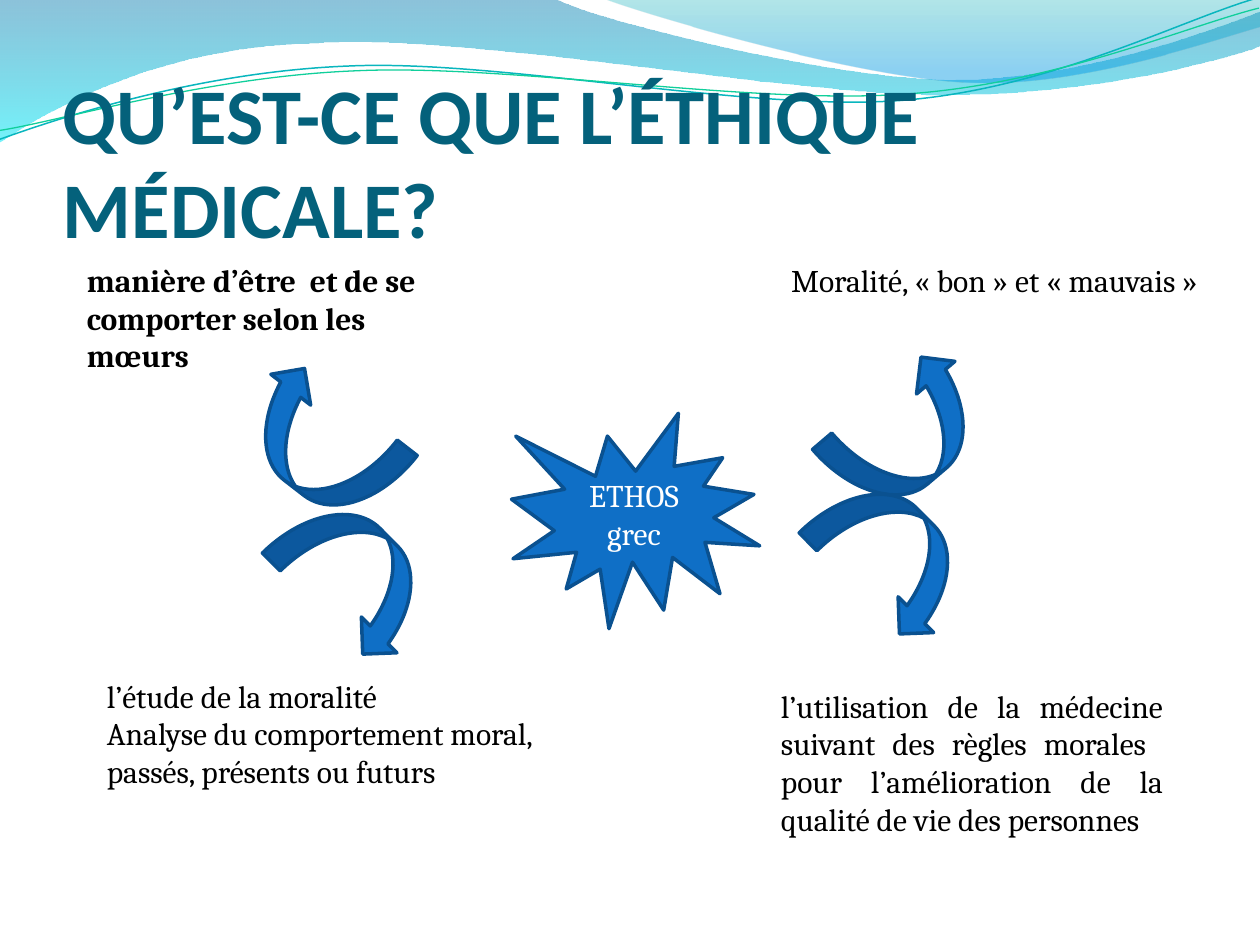
from lxml.etree import SubElement
from pptx import Presentation
from pptx.dml.color import RGBColor
from pptx.enum.shapes import MSO_SHAPE
from pptx.enum.text import MSO_ANCHOR, MSO_AUTO_SIZE, PP_ALIGN
from pptx.oxml.ns import qn
from pptx.util import Inches, Pt

BLUE = RGBColor(0x0F, 0x6F, 0xC6)
EDGE = RGBColor(0x0A, 0x51, 0x90)
TEAL = RGBColor(0x04, 0x61, 0x7B)
CYAN = RGBColor(0x09, 0xB6, 0xBE)
GREEN = RGBColor(0x10, 0xCF, 0x9B)
BLACK = RGBColor(0, 0, 0)
WHITE = RGBColor(255, 255, 255)

deck = Presentation()
deck.slide_width, deck.slide_height = Inches(10), Inches(7.5)
slide = deck.slides.add_slide(deck.slide_layouts[6])
shapes = slide.shapes
CELL = deck.slide_width / 10  # grid of 10 columns by 7.5 rows


def trace(start, parts, close):
    """Outline from parts of one point (line) or three points (Bézier curve)."""
    pts = [(x * CELL, y * CELL) for x, y in [start] + sum(parts, [])]
    pen = shapes.build_freeform(*pts[0], scale=1.0)
    pen.add_line_segments(pts[1:], close=close)
    shape = pen.convert_to_shape()
    shape.shadow.inherit = False
    # Join each three points into one curve
    lines = list(shape.element.iter(qn("a:lnTo")))
    for part in parts:
        group, lines = lines[:len(part)], lines[len(part):]
        if len(part) == 3:
            curve = group[0]
            for line in group[1:]:
                curve.append(line[0])
                line.getparent().remove(line)
            curve.tag = qn("a:cubicBezTo")
    return shape


def write(shape, lines, size, font, color, bold=False, align=PP_ALIGN.LEFT):
    frame = shape.text_frame
    frame.word_wrap = True
    for i, line in enumerate(lines):
        para = frame.paragraphs[0] if i == 0 else frame.add_paragraph()
        para.text = line
        para.alignment = align
        para.font.size = Pt(size)
        para.font.name = font
        para.font.bold = bold
        para.font.color.rgb = color
    return frame


# Waves across the top: start, outline, gradient stops (place, colour, opacity)
waves = [
    ((0, 0),
     [[(4.4, -0.01)],
      [(4.76, 0.17), (6.64, 0.63), (7.58, 0.63)],
      [(8.53, 0.63), (9.58, 0.26), (10, 0.09)],
      [(10.01, 0.36)],
      [(9.83, 0.44), (8.7, 0.76), (7.46, 0.75)],
      [(6.22, 0.75), (3.82, 0.28), (2.57, 0.34)],
      [(1.29, 0.36), (0.46, 0.83), (-0.01, 1.13)]],
     [(0, "0079AD", 45), (100, "00E9F7", 55)]),
    ((4.79, -0.01),
     [[(5.09, 0.11), (6.82, 0.62), (7.69, 0.65)],
      [(8.56, 0.69), (9.61, 0.32), (10, 0.21)],
      [(10, 0)]],
     [(0, "00ABB4", 30), (80, "0099E4", 45), (100, "0099E4", 45)]),
]
for start, parts, stops in waves:
    wave = trace(start, parts, True)
    wave.line.fill.background()
    wave.fill.gradient()
    wave.fill.gradient_angle = 270
    ramp = wave.element.spPr.find(".//" + qn("a:gsLst"))
    for old in list(ramp):
        ramp.remove(old)
    for place, tint, alpha in stops:
        stop = SubElement(ramp, qn("a:gs"), pos=str(place * 1000))
        color = SubElement(stop, qn("a:srgbClr"), val=tint)
        SubElement(color, qn("a:alpha"), val=str(alpha * 1000))

# Thin lines along the waves, tilted together
threads = [
    ((-0.02, 0.87),
     [[(0.47, 0.72), (1.58, 0.41), (2.77, 0.42)],
      [(3.96, 0.42), (5.91, 0.93), (7.12, 0.9)],
      [(8.32, 0.87), (9.4, 0.36), (10, 0.22)]], CYAN, 0.85),
    ((-0.02, 0.8),
     [[(0.46, 0.75), (1.64, 0.45), (2.83, 0.46)],
      [(4.03, 0.46), (5.96, 0.88), (7.16, 0.85)],
      [(8.35, 0.83), (9.42, 0.42), (10.01, 0.3)]], GREEN, 0.75),
]
for start, parts, color, width in threads:
    thread = trace(start, parts, False)
    thread.rotation = 357.3
    thread.fill.background()
    thread.line.color.rgb = color
    thread.line.width = Pt(width)

# Title
title = shapes.add_textbox(*[round(n * CELL) for n in (0.5, 0.77, 9, 1.25)])
frame = write(title, ["QU’EST-CE QUE L’ÉTHIQUE MÉDICALE?"], 45, "Calibri", TEAL, True)
frame.vertical_anchor = MSO_ANCHOR.BOTTOM
frame.margin_left = frame.margin_right = frame.margin_bottom = 0

# Star in the centre and the four curved arrows: kind, box, turn
figures = [
    (MSO_SHAPE.EXPLOSION1, (4.06, 3.28, 1.97, 1.71), 0),
    (MSO_SHAPE.CURVED_UP_ARROW, (6.55, 3.04, 1.33, 0.8), 319.6),
    (MSO_SHAPE.CURVED_DOWN_ARROW, (6.43, 4.02, 1.33, 0.8), 45.2),
    (MSO_SHAPE.CURVED_LEFT_ARROW, (2.14, 2.86, 0.8, 1.33), 127.7),
    (MSO_SHAPE.CURVED_DOWN_ARROW, (2.17, 4.18, 1.33, 0.8), 45.2),
]
for kind, box, turn in figures:
    shape = shapes.add_shape(kind, *[round(n * CELL) for n in box])
    shape.rotation = turn
    shape.shadow.inherit = False
    shape.fill.solid()
    shape.fill.fore_color.rgb = BLUE
    shape.line.color.rgb = EDGE
    shape.line.width = Pt(2)
    if kind == MSO_SHAPE.EXPLOSION1:
        frame = write(shape, ["ETHOS", "grec"], 18, "Cambria", WHITE, align=PP_ALIGN.CENTER)
        frame.vertical_anchor = MSO_ANCHOR.MIDDLE

# Meanings at the four corners
notes = [
    ((0.59, 2.02, 3.11, 0.71),
     ["manière d’être  et de se", "comporter selon les mœurs"], True, PP_ALIGN.LEFT),
    ((6.18, 2.02, 3.52, 0.4),
     ["Moralité, « bon » et « mauvais »"], False, PP_ALIGN.LEFT),
    ((0.75, 5.32, 3.94, 1.31),
     ["l’étude de la moralité", "Analyse du comportement moral, ",
      "passés, présents ou futurs"], False, PP_ALIGN.JUSTIFY),
    ((6.1, 5.4, 3.23, 1.31),
     ["l’utilisation de la médecine suivant des règles morales  pour "
      "l’amélioration de la qualité de vie des personnes"], False, PP_ALIGN.JUSTIFY),
]
for box, lines, bold, align in notes:
    note = shapes.add_textbox(*[round(n * CELL) for n in box])
    frame = write(note, lines, 18, "Cambria", BLACK, bold, align)
    frame.auto_size = MSO_AUTO_SIZE.SHAPE_TO_FIT_TEXT

deck.save("out.pptx")
